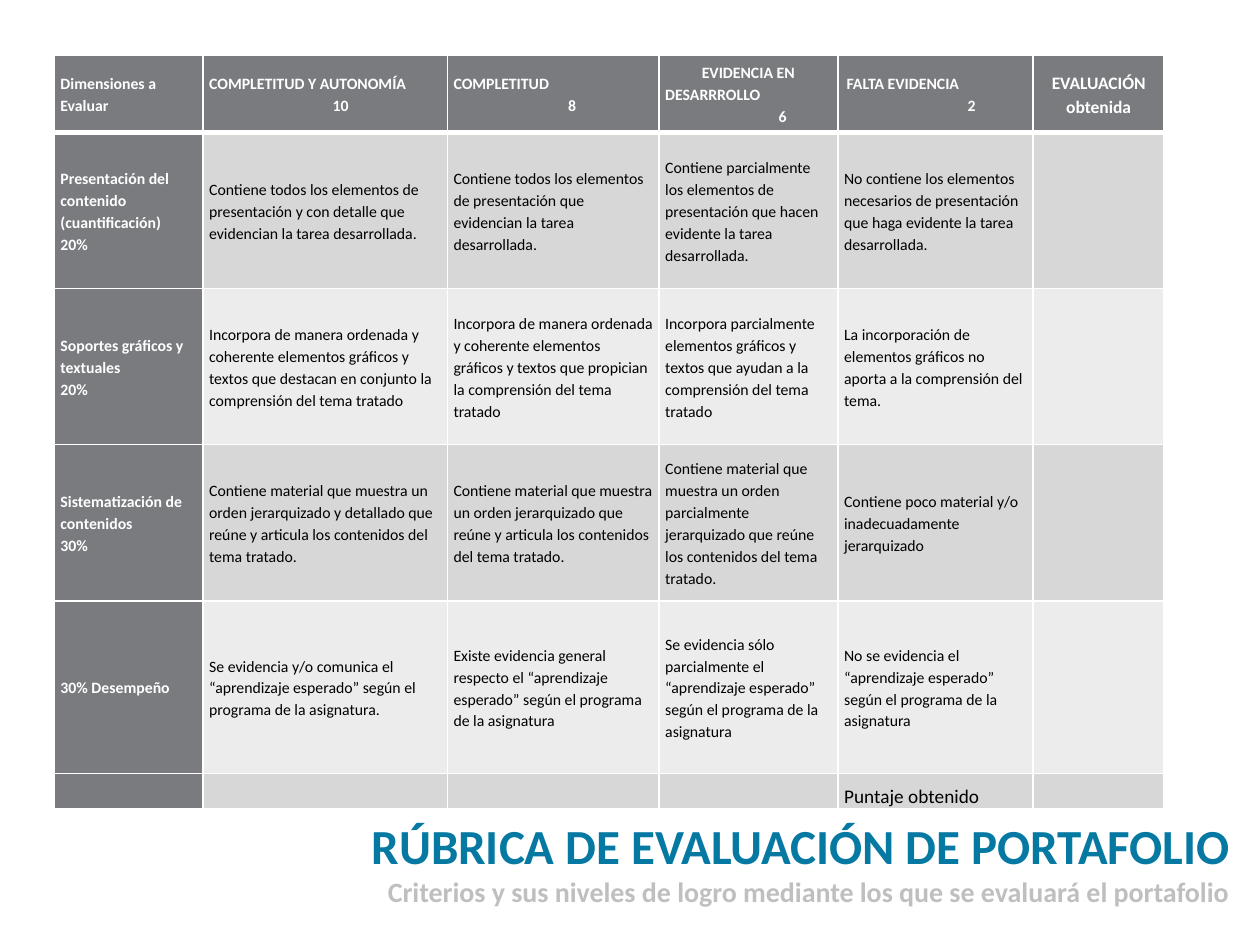
"""Build the portfolio assessment rubric slide."""
from lxml.etree import SubElement
from pptx import Presentation
from pptx.dml.color import RGBColor
from pptx.enum.text import MSO_ANCHOR, MSO_AUTO_SIZE, PP_ALIGN
from pptx.oxml.ns import qn
from pptx.util import Inches, Pt

HUES = {"head": "797B7E", "odd": "D7D7D8", "even": "ECECEC", "white": "FFFFFF",
        "ink": "000000", "blue": "0679A3", "pale": "BFBFBF"}

TITLE = "RÚBRICA DE EVALUACIÓN DE PORTAFOLIO"
SUB = "Criterios y sus niveles de logro mediante los que se evaluará el portafolio"

FIRST = "Dimensiones a Evaluar"
LAST = "EVALUACIÓN obtenida"
LEVELS = [("COMPLETITUD Y AUTONOMÍA", 0, "10", 0.98),
          ("COMPLETITUD", 0, "8", 0.91),
          ("EVIDENCIA EN DESARRROLLO", 0.29, "6", 0.9),
          ("FALTA EVIDENCIA", 0.02, "2", 0.98)]
ROWS = [
    ["Presentación del contenido (cuantificación)\n20%",
     "Contiene todos los elementos de presentación y con detalle que evidencian la tarea desarrollada.",
     "Contiene todos los elementos de presentación que evidencian la tarea desarrollada.",
     "Contiene parcialmente los elementos de presentación que hacen evidente la tarea desarrollada.",
     "No contiene los elementos necesarios de presentación que haga evidente la tarea desarrollada.", ""],
    ["Soportes gráficos y textuales\n20%",
     "Incorpora de manera ordenada y coherente elementos gráficos y textos que destacan en conjunto la comprensión del tema tratado",
     "Incorpora de manera ordenada y coherente elementos gráficos y textos que propician la comprensión del tema tratado",
     "Incorpora parcialmente elementos gráficos y textos que ayudan a la comprensión del tema tratado",
     "La incorporación de elementos gráficos no aporta a la comprensión del tema.", ""],
    ["Sistematización de contenidos\n30%",
     "Contiene material que muestra un orden jerarquizado y detallado que reúne y articula los contenidos del tema tratado.",
     "Contiene material que muestra un orden jerarquizado que reúne y articula los contenidos del tema tratado.",
     "Contiene material que muestra un orden parcialmente jerarquizado que reúne los contenidos del tema tratado.",
     "Contiene poco material y/o inadecuadamente jerarquizado", ""],
    ["30% Desempeño",
     "Se evidencia y/o comunica el “aprendizaje esperado” según el programa de la asignatura.",
     "Existe evidencia general respecto el “aprendizaje esperado” según el programa de la asignatura",
     "Se evidencia sólo parcialmente el “aprendizaje esperado” según el programa de la asignatura",
     "No se evidencia el “aprendizaje esperado” según el programa de la asignatura", ""],
    ["", "", "", "", "Puntaje obtenido", ""],
]
WIDTHS = [1.18, 1.94, 1.68, 1.42, 1.55, 1.04]
HEIGHTS = [0.61, 1.24, 1.24, 1.24, 1.37, 0.28]


def write(par, text, size=9, hue="ink", bold=False, align=PP_ALIGN.LEFT,
          space=1.15, left=0, first=0):
    """Fill one paragraph with formatted text."""
    par.alignment = align
    par.line_spacing = space
    props = par._p.get_or_add_pPr()
    props.set("marL", str(Inches(left)))
    props.set("indent", str(Inches(first)))
    if not text:
        SubElement(par._p, qn("a:endParaRPr"), sz=str(size * 100))
        return
    run = par.add_run()
    run.text = text
    font = run.font
    font.name, font.size, font.bold = "Calibri", Pt(size), bold
    font.color.rgb = RGBColor.from_string(HUES[hue])


def edge(cell, side, width):
    """Draw one white cell border."""
    line = SubElement(cell._tc.get_or_add_tcPr(), qn("a:ln" + side), w=str(Pt(width)))
    fill = SubElement(line, qn("a:solidFill"))
    SubElement(fill, qn("a:srgbClr"), val=HUES["white"])


def dress(cell, row, col):
    """Set the margins, borders and fill of a cell."""
    cell.margin_left = cell.margin_right = Inches(0.05)
    cell.margin_top = cell.margin_bottom = 0
    cell.vertical_anchor = MSO_ANCHOR.BOTTOM if row == len(ROWS) else MSO_ANCHOR.MIDDLE
    for side in "LRTB":
        edge(cell, side, 3 if (row, side) in ((0, "B"), (1, "T")) else 1)
    hue = "head" if row == 0 or col == 0 else "odd" if row % 2 else "even"
    cell.fill.solid()
    cell.fill.fore_color.rgb = RGBColor.from_string(HUES[hue])


def main():
    """Lay out the heading and the rubric table."""
    deck = Presentation()
    deck.slide_width, deck.slide_height = Inches(10), Inches(7.5)
    slide = deck.slides.add_slide(deck.slide_layouts[5])

    title = slide.shapes.title
    title.left, title.top = Inches(2.69), Inches(6.43)
    title.width, title.height = Inches(7.14), Inches(0.81)
    frame = title.text_frame
    frame.word_wrap, frame.auto_size = True, MSO_AUTO_SIZE.NONE
    frame.vertical_anchor = MSO_ANCHOR.TOP
    frame.margin_left = frame.margin_right = Inches(0.07)
    frame.margin_top = frame.margin_bottom = Inches(0.04)
    style = {"bold": True, "align": PP_ALIGN.RIGHT, "space": 1.0}
    write(frame.paragraphs[0], TITLE, size=28, hue="blue", **style)
    write(frame.add_paragraph(), SUB, size=16, hue="pale", **style)

    table = slide.shapes.add_table(
        len(HEIGHTS), len(WIDTHS), Inches(0.43), Inches(0.44),
        Inches(sum(WIDTHS)), Inches(sum(HEIGHTS))).table
    for col, width in zip(table.columns, WIDTHS):
        col.width = Inches(width)
    for row, height in zip(table.rows, HEIGHTS):
        row.height = Inches(height)
    for row in range(len(HEIGHTS)):
        for col in range(len(WIDTHS)):
            dress(table.cell(row, col), row, col)

    bright = {"hue": "white", "bold": True}
    write(table.cell(0, 0).text_frame.paragraphs[0], FIRST, **bright)
    write(table.cell(0, 5).text_frame.paragraphs[0], LAST, size=10,
          align=PP_ALIGN.CENTER, **bright)
    for col, (label, first, score, left) in enumerate(LEVELS, 1):
        frame = table.cell(0, col).text_frame
        write(frame.paragraphs[0], label, first=first, **bright)
        write(frame.add_paragraph(), score, left=left, **bright)

    for row, texts in enumerate(ROWS, 1):
        for col, text in enumerate(texts):
            frame = table.cell(row, col).text_frame
            look = bright if col == 0 else {"size": 11 if row == len(ROWS) else 9}
            for num, line in enumerate(text.split("\n")):
                par = frame.add_paragraph() if num else frame.paragraphs[0]
                write(par, line, **look)

    deck.save("out.pptx")


if __name__ == "__main__":
    main()
